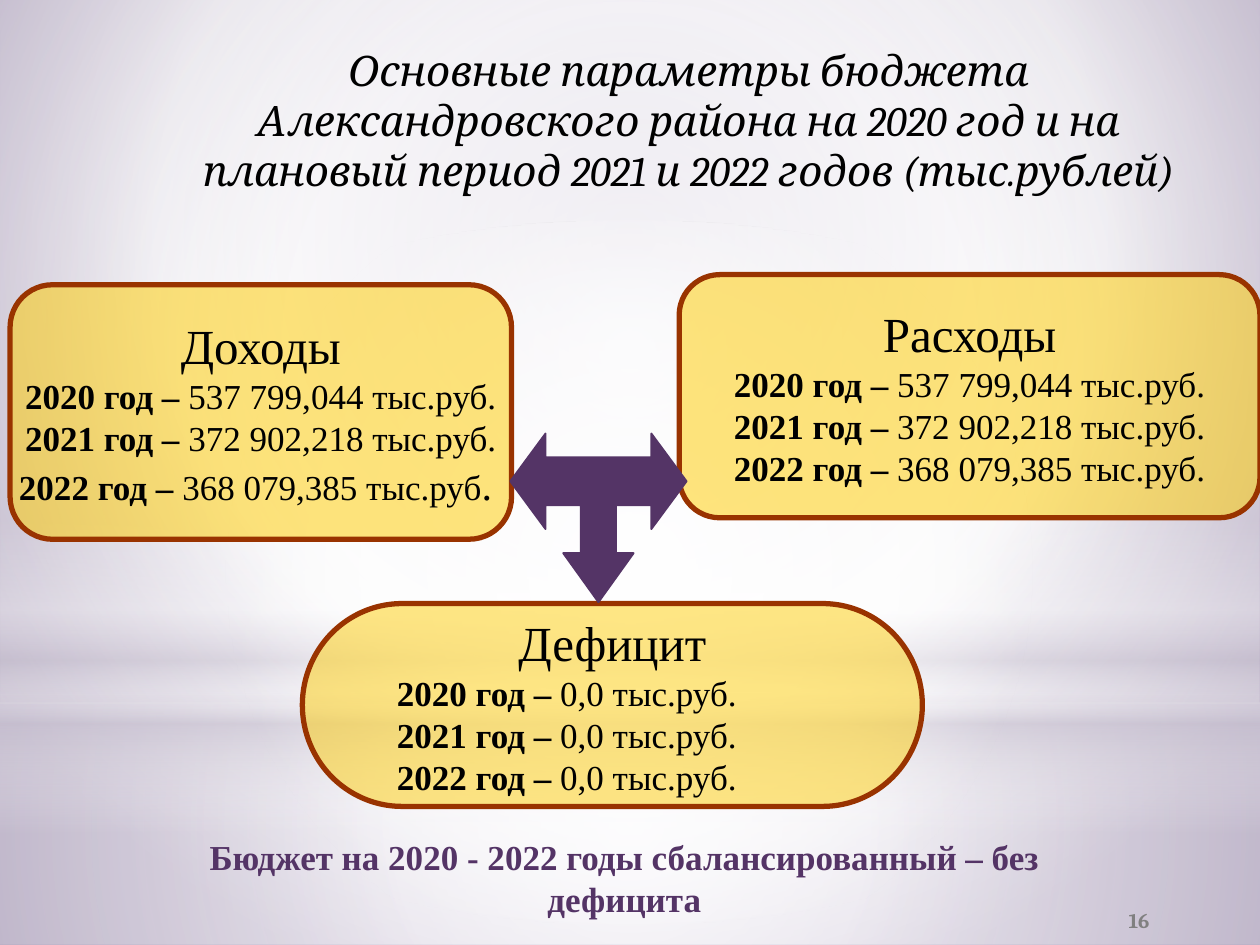
import pptx
import pptx.util
import pptx.dml.color
import pptx.enum.shapes
import pptx.enum.text
import pptx.oxml
import pptx.oxml.ns
from dataclasses import dataclass

Inches = pptx.util.Inches
Align = pptx.enum.text.PP_ALIGN
Anchor = pptx.enum.text.MSO_ANCHOR
Shape = pptx.enum.shapes.MSO_SHAPE


@dataclass(frozen=True)
class Theme:
    serif: str = "Times New Roman"
    display: str = "Cambria"
    ink: str = "000000"
    accent: str = "543466"
    gold: str = "FFCC00"
    border: str = "993300"
    muted: str = "808080"
    title: int = 24
    heading: int = 28
    body: int = 20
    stop: int = 24
    number: int = 12


THEME = Theme()

TITLE = ("Основные параметры бюджета Александровского района на 2020 год и на "
         "плановый период 2021 и 2022 годов (тыс.рублей)")
CONCLUSION = "Бюджет на 2020 - 2022 годы сбалансированный – без дефицита"
SLIDE_NUMBER = "16"
YEARS = (2020, 2021, 2022)
TOTALS = ("537 799,044", "372 902,218", "368 079,385")

# heading, amounts, box, preset, opacity, indent of the yearly lines (None = centred), large final stop
BUDGET_PARTS = [
    ("Доходы", TOTALS, (0.08, 2.26, 3.98, 2.02), Shape.ROUNDED_RECTANGLE, 51, None, True),
    ("Расходы", TOTALS, (5.39, 2.18, 4.61, 1.93), Shape.ROUNDED_RECTANGLE, 51, None, False),
    ("Дефицит", ("0,0",) * 3, (2.4, 4.79, 4.92, 1.61), Shape.FLOWCHART_TERMINATOR, 48, 0.42, False),
]

# Right half of the three-way arrow, from its lower tip up, relative to the top centre
ARROW_TOP_CENTRE = (4.75, 3.44)
ARROW_HALF = [(0, 1.34), (0.28, 0.95), (0.14, 0.95), (0.14, 0.57), (0.42, 0.57),
              (0.42, 0.76), (0.7, 0.38), (0.42, 0), (0.42, 0.19)]

CENTRE = (50, 50, 50, 50)
BACKGROUND = ([(0, "C1B7CD", 100), (60, "FFFFFF", 100), (100, "A191B5", 100)], (20, 10, 20, 60))
# box, preset, gradient stops (position, colour, opacity), focus (None = vertical linear)
BACKDROP = [
    ((0, 5.58, 10, 1.92), Shape.RECTANGLE,
     [(0, "FFFFFF", 91), (37, "FFFFFF", 76), (100, "C9C2D1", 79)], CENTRE),
    ((0, 0, 10, 5.58), Shape.RECTANGLE,
     [(0, "FFFFFF", 89), (48, "FFFFFF", 62), (100, "C9C2D1", 79)], CENTRE),
    ((0, 4.12, 10, 2.5), Shape.RECTANGLE,
     [(0, "FFFFFF", 0), (29, "FFFFFF", 30), (45, "C9C2D1", 40), (55, "FFFFFF", 26),
      (65, "C9C2D1", 60), (100, "FFFFFF", 0)], None),
    ((0, 1.75, 10, 5.58), Shape.OVAL, [(0, "FFFFFF", 100), (56, "FFFFFF", 0)], CENTRE),
]


def rgb(color):
    return pptx.dml.color.RGBColor.from_string(color)


def inches(box):
    return [Inches(length) for length in box]


def set_gradient(fill, stops, focus):
    fill.gradient()
    gradient = fill._xPr.find(pptx.oxml.ns.qn("a:gradFill"))
    for child in list(gradient):
        gradient.remove(child)
    stop_xml = "".join(
        f'<a:gs pos="{position * 1000}"><a:srgbClr val="{color}">'
        f'<a:alpha val="{opacity * 1000}"/></a:srgbClr></a:gs>'
        for position, color, opacity in stops)
    if focus is None:
        shade = '<a:lin ang="5400000" scaled="0"/>'
    else:
        sides = " ".join(f'{side}="{share * 1000}"' for side, share in zip("ltrb", focus))
        shade = f'<a:path path="circle"><a:fillToRect {sides}/></a:path>'
    holder = pptx.oxml.parse_xml(
        f'<a:gradFill {pptx.oxml.ns.nsdecls("a")}><a:gsLst>{stop_xml}</a:gsLst>{shade}</a:gradFill>')
    gradient.extend(list(holder))


def set_solid(shape, color, opacity=100):
    shape.shadow.inherit = False
    shape.fill.solid()
    shape.fill.fore_color.rgb = rgb(color)
    if opacity < 100:
        color_element = shape.fill._xPr.find(".//" + pptx.oxml.ns.qn("a:srgbClr"))
        color_element.append(pptx.oxml.parse_xml(
            f'<a:alpha {pptx.oxml.ns.nsdecls("a")} val="{opacity * 1000}"/>'))


def set_line(shape, color, width):
    shape.line.color.rgb = rgb(color)
    shape.line.width = pptx.util.Pt(width)


def put_text(frame, paragraphs, font=THEME.serif, size=THEME.body, color=THEME.ink, bold=False,
             italic=False, indent=None, anchor=Anchor.TOP, wrap=True):
    """Each paragraph is a list of (text, overrides); indent left-aligns all but the first."""
    frame.word_wrap = wrap
    frame.auto_size = pptx.enum.text.MSO_AUTO_SIZE.NONE
    frame.vertical_anchor = anchor
    for index, runs in enumerate(paragraphs):
        paragraph = frame.add_paragraph() if index else frame.paragraphs[0]
        paragraph.alignment = Align.CENTER
        if index and indent is not None:
            paragraph.alignment = Align.LEFT
            paragraph._p.get_or_add_pPr().set("marL", str(Inches(indent)))
        for text, overrides in runs:
            run = paragraph.add_run()
            run.text = text
            run.font.name = font
            run.font.size = pptx.util.Pt(overrides.get("size", size))
            run.font.bold = overrides.get("bold", bold)
            run.font.italic = italic
            run.font.color.rgb = rgb(color)


def add_backdrop(slide, master):
    """Draw the shaded layers and hand them to the master, behind its placeholders."""
    set_gradient(master.background.fill, *BACKGROUND)
    for order, (box, preset, stops, focus) in enumerate(BACKDROP):
        layer = slide.shapes.add_shape(preset, *inches(box))
        layer.shadow.inherit = False
        layer.line.fill.background()
        set_gradient(layer.fill, stops, focus)
        layer._element.nvSpPr.cNvPr.set("id", str(100 + order))
        master.shapes._spTree.insert(2 + order, layer._element)


def add_budget_part(slide, heading, amounts, box, preset, opacity, indent, large_stop):
    part = slide.shapes.add_shape(preset, *inches(box))
    set_solid(part, THEME.gold, opacity)
    set_line(part, THEME.border, 3)
    lines = [[(heading, {"size": THEME.heading})]]
    lines += [[(f"{year} год – ", {"bold": True}), (f"{amount} тыс.руб", {}), (".", {})]
              for year, amount in zip(YEARS, amounts)]
    if large_stop:
        lines[-1][-1] = (". ", {"size": THEME.stop})
    put_text(part.text_frame, lines, indent=indent, anchor=Anchor.MIDDLE, wrap=indent is not None)


def add_three_way_arrow(slide):
    centre, top = ARROW_TOP_CENTRE
    outline = ARROW_HALF + [(-x, y) for x, y in reversed(ARROW_HALF[1:])]
    points = [(Inches(centre + x), Inches(top + y)) for x, y in outline]
    builder = slide.shapes.build_freeform(*points[0])
    builder.add_line_segments(points[1:], close=True)
    arrow = builder.convert_to_shape()
    set_solid(arrow, THEME.accent)
    set_line(arrow, THEME.accent, 1)


def main():
    prs = pptx.Presentation()
    prs.slide_width, prs.slide_height = Inches(10), Inches(7.5)
    slide = prs.slides.add_slide(prs.slide_layouts[5])
    add_backdrop(slide, prs.slide_master)

    title = slide.shapes.title
    title.left, title.top, title.width, title.height = inches((1.25, 0.3, 8.43, 1.31))
    put_text(title.text_frame, [[(TITLE, {})]], font=THEME.display, size=THEME.title, italic=True)

    for part in BUDGET_PARTS:
        add_budget_part(slide, *part)
    add_three_way_arrow(slide)

    conclusion = slide.shapes.add_textbox(*inches((0.98, 6.58, 7.95, 0.77)))
    put_text(conclusion.text_frame, [[(CONCLUSION, {})]], color=THEME.accent, bold=True)
    number = slide.shapes.add_textbox(*inches((8.04, 7.1, 2, 0.4)))
    put_text(number.text_frame, [[(SLIDE_NUMBER, {})]], font=THEME.display, size=THEME.number,
             color=THEME.muted, bold=True, anchor=Anchor.MIDDLE)
    prs.save("out.pptx")


if __name__ == "__main__":
    main()
